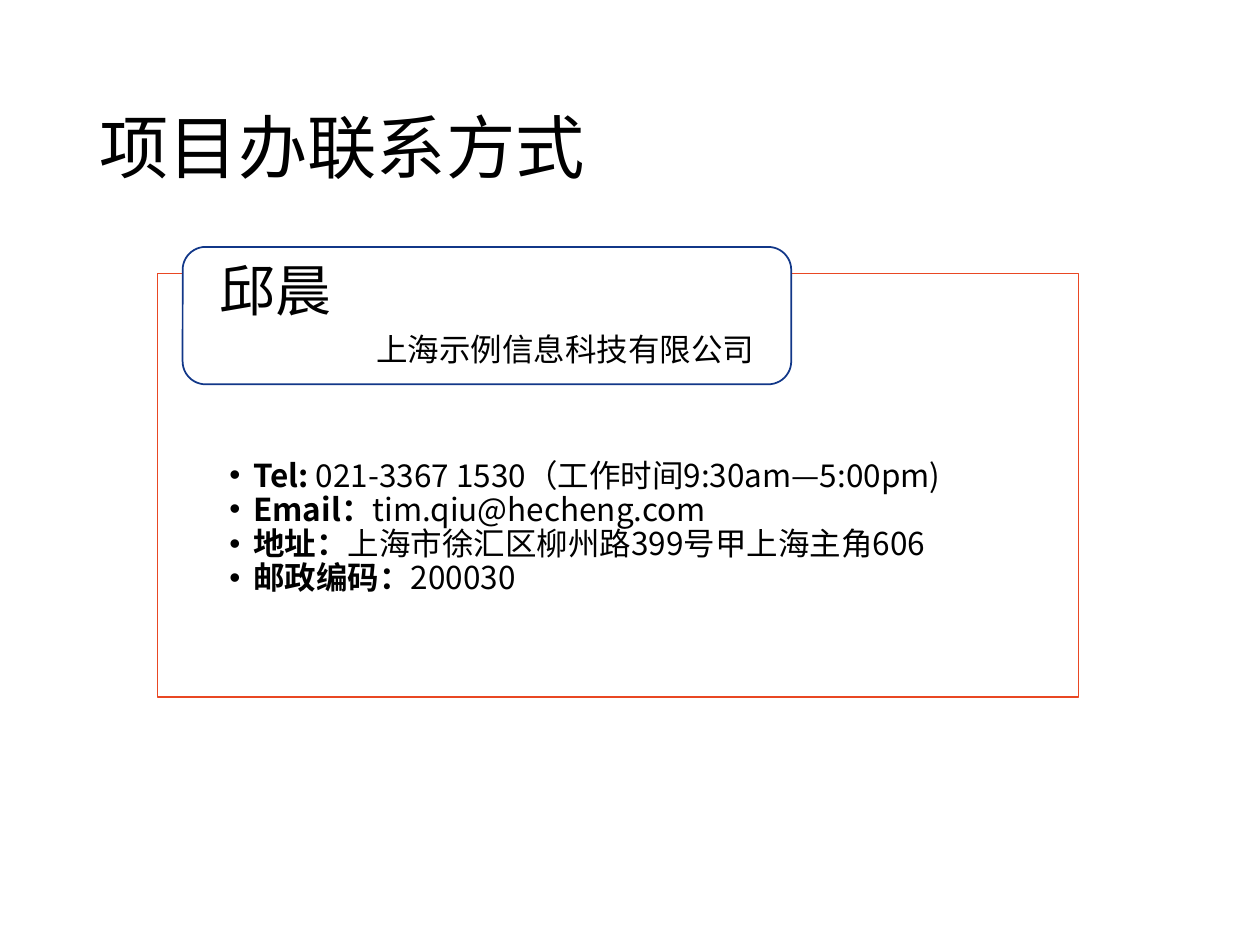
from lxml import etree
from pptx import Presentation
from pptx.dml.color import RGBColor
from pptx.enum.shapes import MSO_SHAPE
from pptx.enum.text import MSO_ANCHOR, MSO_AUTO_SIZE, PP_ALIGN
from pptx.oxml.ns import qn
from pptx.util import Inches, Pt

RECT, ROUND = MSO_SHAPE.RECTANGLE, MSO_SHAPE.ROUNDED_RECTANGLE
TOP, MIDDLE = MSO_ANCHOR.TOP, MSO_ANCHOR.MIDDLE
LEFT, RIGHT = PP_ALIGN.LEFT, PP_ALIGN.RIGHT
NO_FIT = MSO_AUTO_SIZE.NONE
COLORS = {"text": "000000", "paper": "FFFFFF", "frame": "E94723", "card": "113788"}
HEAD, SANS = "Calibri", "Noto Sans CJK SC"
FRAME = (1.25, 2.17, 7.31, 3.36)
CARD = (1.45, 1.96, 4.83, 1.09)
DETAILS = [
    ("Tel: ", "021-3367 1530（工作时间9:30am—5:00pm)"),
    ("Email：", "tim.qiu@hecheng.com"),
    ("地址：", "上海市徐汇区柳州路399号甲上海主角606"),
    ("邮政编码：", "200030"),
]


def color(name):
    return RGBColor.from_string(COLORS[name])


def place(shape, box):
    shape.left, shape.top, shape.width, shape.height = map(Inches, box)


def set_frame(frame, anchor, insets):
    frame.word_wrap = True
    frame.auto_size = NO_FIT
    frame.vertical_anchor = anchor
    (frame.margin_left, frame.margin_top,
     frame.margin_right, frame.margin_bottom) = map(Inches, insets)


def style(para, size, font, align=LEFT, after=0):
    para.alignment = align
    para.line_spacing = 0.9
    para.space_before = Pt(0)
    para.space_after = Pt(after)
    para.font.size = Pt(size)
    para.font.name = font
    para.font.color.rgb = color("text")


def add_bullet(para):
    props = para._p.get_or_add_pPr()
    props.set("marL", str(Inches(0.19)))
    props.set("indent", str(Inches(-0.19)))
    etree.SubElement(props, qn("a:buChar")).set("char", "•")


def add_panel(slide, kind, box, line):
    panel = slide.shapes.add_shape(kind, *map(Inches, box))
    panel.shadow.inherit = False
    panel.fill.solid()
    panel.fill.fore_color.rgb = color("paper")
    panel.line.color.rgb = color(line)
    panel.line.width = Pt(1)
    return panel


def fill_title(title, text):
    place(title, (0.69, 0.86, 8.62, 0.68))
    set_frame(title.text_frame, MIDDLE, (0.1, 0.05, 0.1, 0.05))
    title.text_frame.text = text
    style(title.text_frame.paragraphs[0], 39.6, HEAD)


def fill_list(body, items):
    place(body, FRAME)
    frame = body.text_frame
    set_frame(frame, TOP, (0.57, 1.48, 0.57, 0.14))
    for i, (label, value) in enumerate(items):
        para = frame.add_paragraph() if i else frame.paragraphs[0]
        para.level = 1
        add_bullet(para)
        style(para, 18, SANS)
        for text, bold in ((label, True), (value, False)):
            run = para.add_run()
            run.text = text
            run.font.bold = bold


def fill_card(card, name, firm):
    frame = card.text_frame
    set_frame(frame, MIDDLE, (0.24, 0.05, 0.24, 0.05))
    frame.text = name
    style(frame.paragraphs[0], 32, HEAD, after=6)
    para = frame.add_paragraph()
    para.text = firm
    style(para, 18, SANS, RIGHT)


def main():
    """Build the contact slide and save it."""
    deck = Presentation()
    deck.slide_width, deck.slide_height = Inches(10), Inches(7.5)
    slide = deck.slides.add_slide(deck.slide_layouts[1])
    title, body = slide.placeholders
    fill_title(title, "项目办联系方式")
    fill_list(body, DETAILS)
    panel = add_panel(slide, RECT, FRAME, "frame")
    panel._element.addnext(body._element)
    card = add_panel(slide, ROUND, CARD, "card")
    fill_card(card, "邱晨", "上海示例信息科技有限公司")
    deck.save("out.pptx")


if __name__ == "__main__":
    main()
